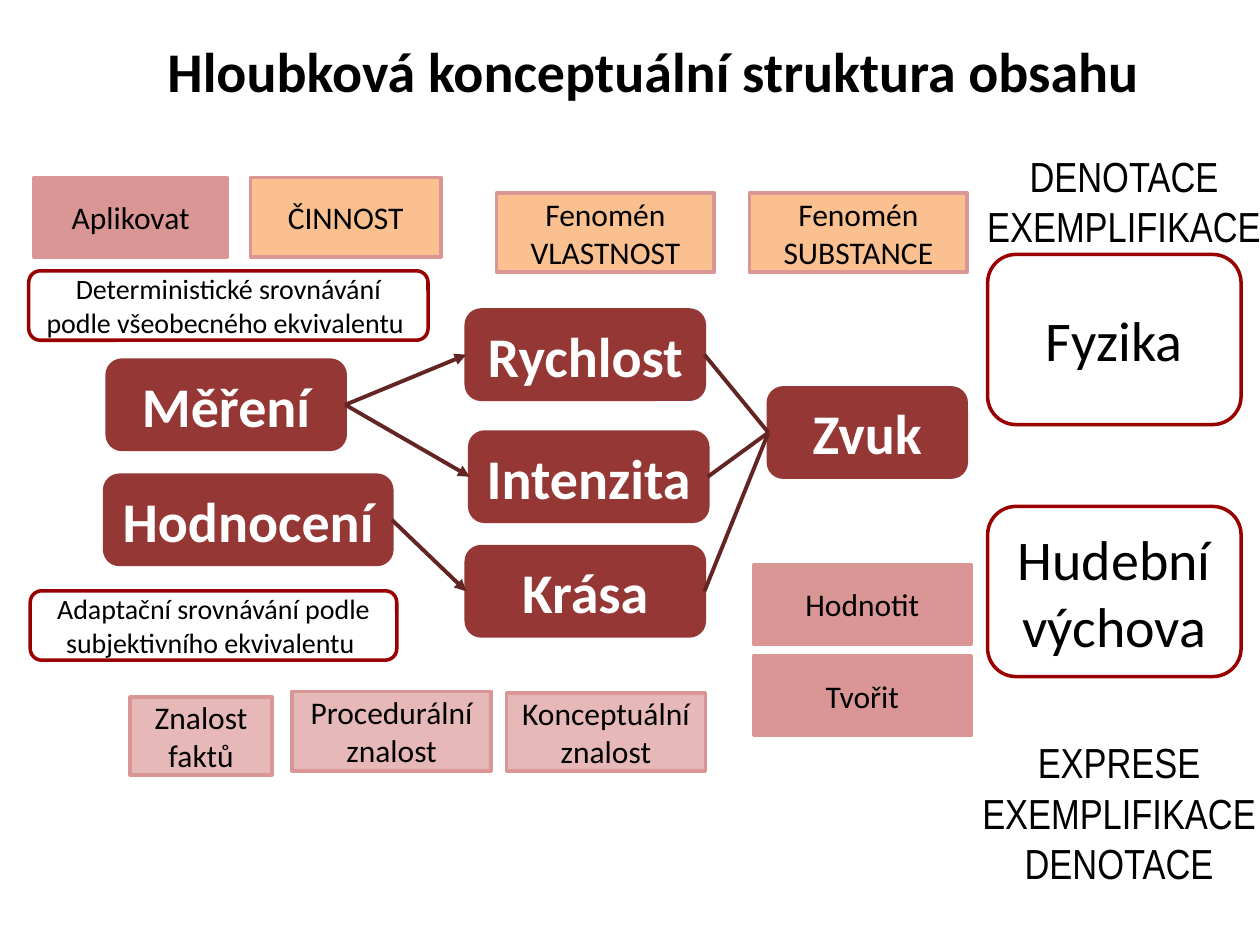
import pptx
import pptx.util
import pptx.dml.color
import pptx.enum.shapes
import pptx.enum.text
import pptx.oxml
import pptx.oxml.ns

Cm, Pt = pptx.util.Cm, pptx.util.Pt
KIND = pptx.enum.shapes.MSO_SHAPE
ALIGN = pptx.enum.text.PP_ALIGN
ANCHOR = pptx.enum.text.MSO_ANCHOR

# Boxes: text, left, top, width, height in cm
NODES = [
    ("Měření", 2.16, 7.26, 4.8, 1.8),
    ("Hodnocení", 2.11, 9.58, 5.79, 1.8),
    ("Rychlost", 9.4, 6.25, 4.8, 1.8),
    ("Intenzita", 9.47, 8.71, 4.8, 1.8),
    ("Krása", 9.4, 11.02, 4.8, 1.8),
    ("Zvuk", 15.49, 7.82, 3.99, 1.8),
]
FIELDS = [
    ("Fyzika", 19.91, 5.13, 5.11, 3.43),
    ("Hudební výchova", 19.91, 10.21, 5.11, 3.43),
]
NOTES = [
    ("Deterministické srovnávání podle všeobecného ekvivalentu ", 0.58, 5.46, 8.05, 1.4),
    ("Adaptační srovnávání podle subjektivního ekvivalentu ", 0.61, 11.91, 7.39, 1.4),
]
VERBS = [
    ("Aplikovat", 0.69, 3.58, 3.89, 1.6),
    ("Hodnotit", 15.19, 11.38, 4.39, 1.6),
    ("Tvořit", 15.19, 13.23, 4.39, 1.6),
]
HEADS = [
    ("ČINNOST", 5.05, 3.58, 3.84, 1.6),
    ("Fenomén\nVLASTNOST", 10.01, 3.89, 4.39, 1.6),
    ("Fenomén\nSUBSTANCE", 15.11, 3.89, 4.39, 1.6),
]
SKILLS = [
    ("Znalost\nfaktů", 2.62, 14.05, 2.87, 1.57),
    ("Procedurální znalost", 5.89, 13.94, 4.01, 1.6),
    ("Konceptuální znalost", 10.21, 13.97, 4.01, 1.57),
]
# Boxes, preset, fill, line, text format
GROUPS = [
    (NODES, KIND.ROUNDED_RECTANGLE, "953735", "953735",
     dict(size=32, bold=True, color="FFFFFF")),
    (SKILLS, KIND.RECTANGLE, "E6B9B8", "D99694", dict(size=18)),
    (VERBS, KIND.RECTANGLE, "D99694", "D99694", dict(size=18)),
    (HEADS, KIND.RECTANGLE, "FAC090", "D99694", dict(size=18)),
    (NOTES, KIND.ROUNDED_RECTANGLE, "FFFFFF", "990000", dict(size=16)),
    (FIELDS, KIND.ROUNDED_RECTANGLE, "FFFFFF", "990000", dict(size=32)),
]
# From, to, arrowhead
LINKS = [
    ("Rychlost", "Zvuk", False),
    ("Intenzita", "Zvuk", False),
    ("Krása", "Zvuk", False),
    ("Měření", "Rychlost", True),
    ("Měření", "Intenzita", True),
    ("Hodnocení", "Krása", True),
]
TITLE = ("Hloubková konceptuální struktura obsahu", 0.36, 0.61, 22.86, 2.29)
MODES = [
    ("DENOTACE\nEXEMPLIFIKACE", 19.61, 2.9, 6.1, 2.31),
    ("EXPRESE\nEXEMPLIFIKACE\nDENOTACE", 19.51, 14.73, 6.1, 3.33),
]


def rgb(code):
    return pptx.dml.color.RGBColor.from_string(code)


def write(shape, text, size=18, font="Calibri", color="000000", bold=False,
          align=ALIGN.CENTER, anchor=ANCHOR.MIDDLE, wrap=True):
    frame = shape.text_frame
    frame.word_wrap = wrap
    frame.vertical_anchor = anchor
    frame.text = text
    for para in frame.paragraphs:
        para.alignment = align
        for run in para.runs:
            run.font.name = font
            run.font.size = Pt(size)
            run.font.bold = bold
            run.font.color.rgb = rgb(color)


def draw_box(slide, kind, place, fill, line):
    shape = slide.shapes.add_shape(kind, *map(Cm, place))
    shape.shadow.inherit = False
    shape.fill.solid()
    shape.fill.fore_color.rgb = rgb(fill)
    shape.line.color.rgb = rgb(line)
    shape.line.width = Pt(2)
    return shape


def link(slide, start, end, arrow):
    """Join the right side of start to the left side of end."""
    line = slide.shapes.add_connector(
        pptx.enum.shapes.MSO_CONNECTOR.STRAIGHT, 0, 0, 0, 0)
    line.begin_connect(start, 3)
    line.end_connect(end, 1)
    line.line.color.rgb = rgb("632523")
    line.line.width = Pt(2.25)
    qn = pptx.oxml.ns.qn
    if arrow:
        stroke = line.line._get_or_add_ln()
        tip = stroke.makeelement(qn("a:tailEnd"), {"type": "triangle"})
        stroke.append(tip)
    props = line._element.spPr
    props.append(props.makeelement(qn("a:effectLst"), {}))


def main():
    deck = pptx.Presentation()
    deck.slide_width, deck.slide_height = Cm(25.4), Cm(19.05)
    slide = deck.slides.add_slide(deck.slide_layouts[6])

    text, *place = TITLE
    write(slide.shapes.add_textbox(*map(Cm, place)), text, size=32, bold=True,
          align=ALIGN.RIGHT, anchor=ANCHOR.TOP)

    boxes = {}
    for items, kind, fill, line, style in GROUPS:
        for text, *place in items:
            boxes[text] = draw_box(slide, kind, place, fill, line)
            write(boxes[text], text, **style)

    for start, end, arrow in LINKS:
        link(slide, boxes[start], boxes[end], arrow)

    for text, *place in MODES:
        write(slide.shapes.add_textbox(*map(Cm, place)), text, size=24,
              font="Arial Narrow", anchor=ANCHOR.TOP, wrap=False)

    deck.save("out.pptx")


if __name__ == "__main__":
    main()
